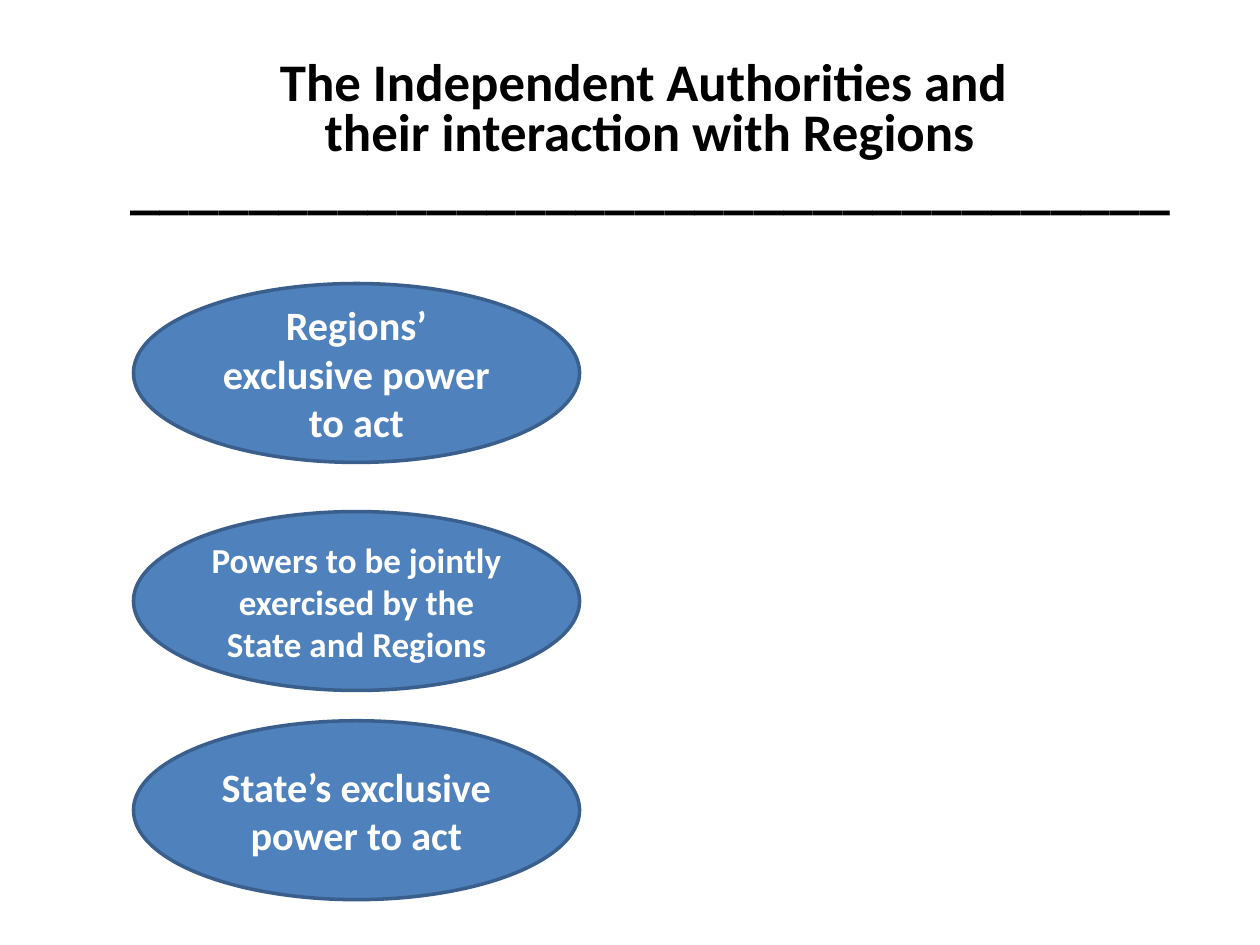
from pptx import Presentation
from pptx.dml.color import RGBColor
from pptx.enum.shapes import MSO_SHAPE
from pptx.enum.text import MSO_ANCHOR, MSO_AUTO_SIZE, PP_ALIGN
from pptx.util import Inches, Pt

OVAL = MSO_SHAPE.OVAL
MIDDLE = MSO_ANCHOR.MIDDLE
NO_AUTOFIT = MSO_AUTO_SIZE.NONE
CENTER = PP_ALIGN.CENTER
BLACK = RGBColor(0x00, 0x00, 0x00)
WHITE = RGBColor(0xFF, 0xFF, 0xFF)
BLUE = RGBColor(0x4F, 0x81, 0xBD)
DARK_BLUE = RGBColor(0x3A, 0x5F, 0x8C)


def write_text(para, text, size, color, line_spacing=1.0):
    para.alignment = CENTER
    para.line_spacing = line_spacing
    span = para.add_run()
    span.text = text
    span.font.name = "Calibri"
    span.font.size = Pt(size)
    span.font.bold = True
    span.font.color.rgb = color


deck = Presentation()
deck.slide_width = Inches(10)
deck.slide_height = Inches(7.5)
page = deck.slides.add_slide(deck.slide_layouts[5])

title = page.shapes.title
title.left, title.top = Inches(0.91), Inches(0.36)
title.width, title.height = Inches(8.5), Inches(1.5)
title_frame = title.text_frame
title_frame.auto_size = NO_AUTOFIT
title_frame.word_wrap = True
title_frame.vertical_anchor = MIDDLE
title_lines = [
    ("The Independent Authorities and ", 30.2),
    ("their interaction with Regions", 30.2),
    ("_" * 35, 34.1),
]
for index, (text, size) in enumerate(title_lines):
    para = title_frame.add_paragraph() if index else title_frame.paragraphs[0]
    write_text(para, text, size, BLACK, line_spacing=0.8)

powers = [
    (2.25, "Regions’ exclusive power to act", 23),
    (4.06, "Powers to be jointly exercised by the State and Regions", 20),
    (5.72, "State’s exclusive power to act", 23),
]
for top, text, size in powers:
    oval = page.shapes.add_shape(
        OVAL, Inches(1.06), Inches(top), Inches(3.54), Inches(1.42)
    )
    oval.shadow.inherit = False
    oval.fill.solid()
    oval.fill.fore_color.rgb = BLUE
    oval.line.color.rgb = DARK_BLUE
    oval.line.width = Pt(2)
    oval.text_frame.word_wrap = True
    oval.text_frame.vertical_anchor = MIDDLE
    write_text(oval.text_frame.paragraphs[0], text, size, WHITE)

deck.save("out.pptx")
